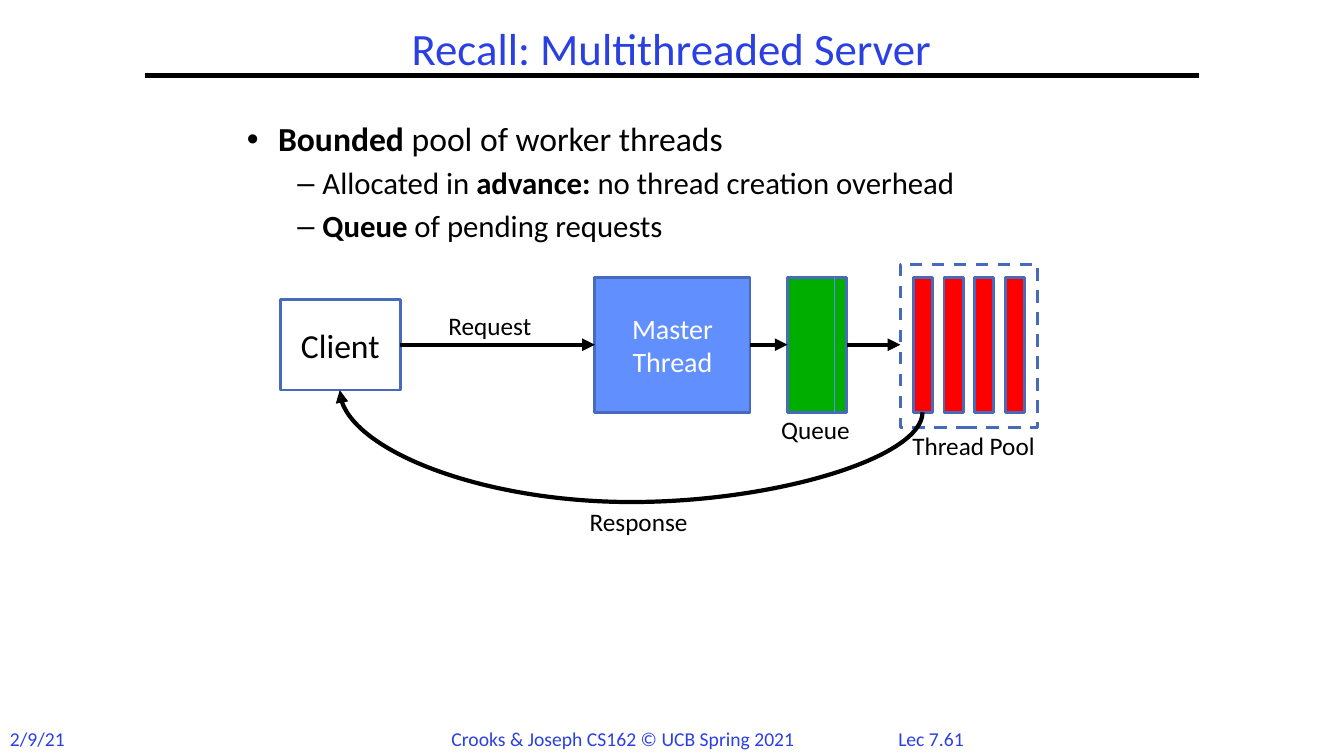
from dataclasses import dataclass

from lxml.etree import SubElement
from pptx import Presentation
from pptx.dml.color import RGBColor
from pptx.enum.dml import MSO_LINE as Dash
from pptx.enum.shapes import MSO_CONNECTOR as Link, MSO_SHAPE as Form
from pptx.enum.text import MSO_ANCHOR as Anchor, PP_ALIGN as Align
from pptx.oxml.ns import qn
from pptx.util import Inches, Pt

FONT = "Calibri"
COLORS = {
    "black": "000000", "white": "FFFFFF", "title": "2A40E2", "edge": "486ABB",
    "master": "618FFD", "queue": "00AE00", "worker": "FF0000", "slot": "5B8AFB",
}
MID = 3.42  # height of the request flow
TOP, TALL = 2.75, 1.34  # master, queue and workers share these


@dataclass
class Run:
    text: str
    bold: bool = False


@dataclass
class Label:
    text: str
    x: float
    y: float
    w: float
    h: float = 0.4
    size: int = 18
    color: str = "black"
    align: Align = Align.LEFT
    wrap: bool = False


@dataclass
class Box:
    x: float
    y: float
    w: float
    h: float
    fill: str = ""
    text: str = ""
    size: int = 20
    ink: str = "white"
    line: float = 2
    dash: bool = False


@dataclass
class Line:
    x1: float
    y1: float
    x2: float
    y2: float
    color: str = "black"
    width: float = 3
    arrow: bool = True


@dataclass
class Point:
    runs: list[Run]
    size: int
    mark: str
    left: float
    hang: float
    level: int = 0


LABELS = [
    Label("Lec 7.61", 8.75, 7.16, 0.97, 0.33, 14, "title", Align.CENTER),
    Label("2/9/21", 0, 7.16, 0.8, 0.34, 14, "title"),
    Label("Crooks & Joseph CS162 © UCB Spring 2021", 4.38, 7.16, 3.76, 0.34, 14, "title"),
    Label("Queue", 7.65, 4.06, 0.9),
    Label("Thread Pool", 8.95, 4.22, 1.46),
    Label("Request", 4.35, 3.03, 1.03),
    Label("Response", 5.75, 4.97, 1.18),
]
TITLE = Label("Recall: Multithreaded Server", 2.17, 0.29, 8.98, 0.43, 32, "title",
              Align.CENTER, True)
POINTS = [
    Point([Run("Bounded", True), Run(" pool of worker threads")], 24, "•", 0.31, 0.31),
    Point([Run("Allocated in "), Run("advance:", True), Run(" no thread creation overhead")],
          22, "–", 0.75, 0.25, 1),
    Point([Run("Queue", True), Run(" of pending requests")], 22, "–", 0.75, 0.25, 1),
]
BOXES = [
    Box(5.9, TOP, 1.54, TALL, "master", "Master Thread"),
    Box(7.81, TOP, 0.59, TALL, "queue"),
    *[Box(9.06 + i * 0.91 / 3, TOP, 0.19, TALL, "worker") for i in range(4)],
    Box(8.93, 2.62, 1.36, 1.62, line=2.25, dash=True),
    Box(2.78, 2.97, 1.19, 0.9, text="Client", size=24, ink="black"),
]
LINES = [
    Line(1.44, 0.75, 11.89, 0.75, arrow=False),
    Line(7.44, MID, 7.81, MID),
    Line(8.4, MID, 8.93, MID),
    Line(3.97, MID, 5.9, MID),
    Line(8.28, TOP, 8.28, TOP + TALL, "slot", 0.75, False),
]


def rgb(name: str) -> RGBColor:
    return RGBColor.from_string(COLORS[name])


def add_run(para, run: Run, size: int, color: str) -> None:
    part = para.add_run()
    part.text = run.text
    font = part.font
    font.name, font.size, font.bold = FONT, Pt(size), run.bold
    font.color.rgb = rgb(color)


def add_label(slide, item: Label):
    frame = slide.shapes.add_textbox(*map(Inches, (item.x, item.y, item.w, item.h))).text_frame
    frame.word_wrap = item.wrap
    para = frame.paragraphs[0]
    para.alignment = item.align
    add_run(para, Run(item.text), item.size, item.color)
    return frame


def add_title(slide) -> None:
    frame = add_label(slide, TITLE)
    frame.vertical_anchor = Anchor.MIDDLE
    frame.paragraphs[0].line_spacing = 0.9


def add_points(slide) -> None:
    frame = slide.shapes.add_textbox(*map(Inches, (2.35, 1.17, 8.62, 4.76))).text_frame
    frame.word_wrap = True
    for i, item in enumerate(POINTS):
        para = frame.add_paragraph() if i else frame.paragraphs[0]
        para.level = item.level
        para.line_spacing = 0.9
        para.space_before = Pt(item.size * 0.3)
        props = para._p.get_or_add_pPr()
        props.set("marL", str(Inches(item.left)))
        props.set("indent", str(-Inches(item.hang)))
        SubElement(props, qn("a:buFont"), typeface="Arial")
        SubElement(props, qn("a:buChar"), char=item.mark)
        for run in item.runs:
            add_run(para, run, item.size, "black")


def add_box(slide, box: Box) -> None:
    shape = slide.shapes.add_shape(Form.RECTANGLE, *map(Inches, (box.x, box.y, box.w, box.h)))
    shape.shadow.inherit = False
    if box.fill:
        shape.fill.solid()
        shape.fill.fore_color.rgb = rgb(box.fill)
    else:
        shape.fill.background()
    shape.line.color.rgb = rgb("edge")
    shape.line.width = Pt(box.line)
    if box.dash:
        shape.line.dash_style = Dash.DASH
    if box.text:
        frame = shape.text_frame
        frame.word_wrap = True
        frame.vertical_anchor = Anchor.MIDDLE
        para = frame.paragraphs[0]
        para.alignment = Align.CENTER
        add_run(para, Run(box.text), box.size, box.ink)


def add_line(slide, line: Line, kind: Link = Link.STRAIGHT):
    ends = map(Inches, (line.x1, line.y1, line.x2, line.y2))
    link = slide.shapes.add_connector(kind, *ends)
    link.line.color.rgb = rgb(line.color)
    link.line.width = Pt(line.width)
    if line.arrow:
        SubElement(link.line._get_or_add_ln(), qn("a:tailEnd"), type="triangle")
    SubElement(link._element.spPr, qn("a:effectLst"))
    return link


def add_reply(slide) -> None:
    """Draw the curve from the first worker back to the client, turned a quarter."""
    link = add_line(slide, Line(6.37, 1.09, 6.15, 6.87), Link.CURVE)
    props = link._element.spPr
    props.find(qn("a:xfrm")).set("rot", str(90 * 60000))
    guides = props.find(qn("a:prstGeom")).get_or_add_avLst()
    SubElement(guides, qn("a:gd"), name="adj1", fmla="val -404500")


def main() -> None:
    deck = Presentation()
    deck.slide_width, deck.slide_height = Inches(13.33), Inches(7.5)
    slide = deck.slides.add_slide(deck.slide_layouts[6])
    add_title(slide)
    add_points(slide)
    for box in BOXES:
        add_box(slide, box)
    for line in LINES:
        add_line(slide, line)
    add_reply(slide)
    for item in LABELS:
        add_label(slide, item)
    deck.save("out.pptx")


if __name__ == "__main__":
    main()
